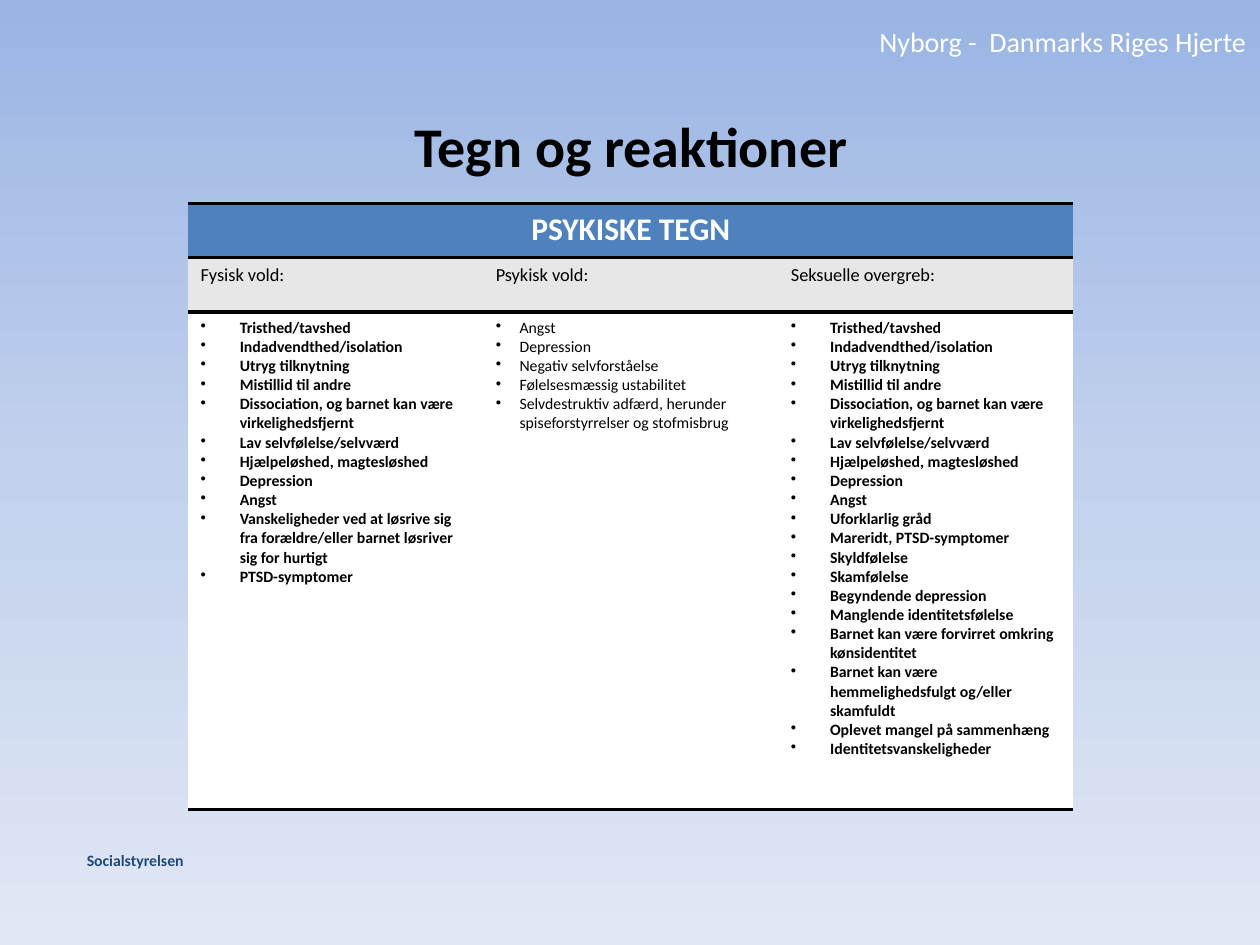
import pptx
import pptx.util
import pptx.dml.color
import pptx.enum.text
import pptx.oxml
import pptx.oxml.ns
import copy

Cm, Pt = pptx.util.Cm, pptx.util.Pt
RGB = pptx.dml.color.RGBColor
ALIGN = pptx.enum.text.PP_ALIGN
qn = pptx.oxml.ns.qn

BLACK = RGB(0x00, 0x00, 0x00)
WHITE = RGB(0xFF, 0xFF, 0xFF)
BLUE = RGB(0x4F, 0x81, 0xBD)
NAVY = RGB(0x1F, 0x49, 0x7D)
GREY = RGB(0xE7, 0xE7, 0xE7)
SKY = [(0, RGB(0x9A, 0xB5, 0xE4)), (0.5, RGB(0xC2, 0xD1, 0xED)),
       (1, RGB(0xE1, 0xE8, 0xF5))]
PLAIN = "{2D5ABB26-0587-4C30-8999-92F81FD0307C}"  # no style, no grid

# Content: text, box in cm, inset in cm, alignment, font
TEXTS = [
    ("Nyborg -  Danmarks Riges Hjerte", (-0.03, 0.38, 25.4, 0.94), None,
     ALIGN.RIGHT, {"size": Pt(16), "color": WHITE}),
    ("Socialstyrelsen", (1.75, 17.15, 3, 0.38), 0,
     ALIGN.LEFT, {"size": Pt(9), "bold": True, "color": NAVY}),
    ("Tegn og reaktioner", (1.75, 2.13, 21.95, 2.11), None,
     ALIGN.CENTER, {"size": Pt(32), "bold": True}),
]
HEAD = "PSYKISKE TEGN"
SHARED = [
    "Tristhed/tavshed", "Indadvendthed/isolation", "Utryg tilknytning",
    "Mistillid til andre",
    "Dissociation, og barnet kan være virkelighedsfjernt",
    "Lav selvfølelse/selvværd", "Hjælpeløshed, magtesløshed",
    "Depression", "Angst",
]
# Heading, signs, bold, indent in cm
COLUMNS = [
    ("Fysisk vold:", SHARED + [
        "Vanskeligheder ved at løsrive sig fra forældre/eller barnet "
        "løsriver sig for hurtigt",
        "PTSD-symptomer"], True, 0.79),
    ("Psykisk vold:", [
        "Angst", "Depression", "Negativ selvforståelse",
        "Følelsesmæssig ustabilitet",
        "Selvdestruktiv adfærd, herunder spiseforstyrrelser og stofmisbrug",
    ], False, 0.48),
    ("Seksuelle overgreb:", SHARED + [
        "Uforklarlig gråd", "Mareridt, PTSD-symptomer", "Skyldfølelse",
        "Skamfølelse", "Begyndende depression", "Manglende identitetsfølelse",
        "Barnet kan være forvirret omkring kønsidentitet",
        "Barnet kan være hemmelighedsfulgt og/eller skamfuldt",
        "Oplevet mangel på sammenhæng", "Identitetsvanskeligheder",
    ], True, 0.79),
]
LEFT, TOP, WIDTH = 3.79, 4.11, 5.95
HEIGHTS = [1.09, 1.09, 10.03]


def style(font, fmt):
    base = {"name": "Calibri", "bold": False, "color": BLACK}
    for key, val in {**base, **fmt}.items():
        if key == "color":
            font.color.rgb = val
        else:
            setattr(font, key, val)


def write(para, text, fmt, align=ALIGN.LEFT):
    para.alignment = align
    run = para.add_run()
    run.text = text
    style(run.font, fmt)


def bullet(para, dent):
    props = para._p.get_or_add_pPr()
    props.set("marL", str(Cm(dent)))
    props.set("indent", str(-Cm(dent)))
    mark = pptx.oxml.parse_xml(
        f'<a:buChar {pptx.oxml.ns.nsdecls("a")} char="•"/>')
    props.append(mark)


def paint(cell, color, sides=()):
    """Borders come before the fill in the cell properties."""
    props = cell._tc.get_or_add_tcPr()
    for side in sides:
        props.append(pptx.oxml.parse_xml(
            f'<a:ln{side} {pptx.oxml.ns.nsdecls("a")} w="{Pt(2)}">'
            f'<a:solidFill><a:srgbClr val="{BLACK}"/></a:solidFill>'
            f'</a:ln{side}>'))
    cell.fill.solid()
    cell.fill.fore_color.rgb = color


def backdrop(slide):
    fill = slide.background.fill
    fill.gradient()
    fill.gradient_angle = 270
    stops = next(slide.element.iter(qn("a:gsLst")))
    stops.append(copy.deepcopy(stops[0]))
    for stop, (pos, color) in zip(fill.gradient_stops, SKY):
        stop.position = pos
        stop.color.rgb = color


def label(slide, text, box, inset, align, fmt):
    frame = slide.shapes.add_textbox(*map(Cm, box)).text_frame
    frame.word_wrap = True
    if inset is not None:
        for side in ("left", "top", "right", "bottom"):
            setattr(frame, f"margin_{side}", Cm(inset))
    write(frame.paragraphs[0], text, fmt, align)


def grid(slide):
    count = len(COLUMNS)
    table = slide.shapes.add_table(
        len(HEIGHTS), count, Cm(LEFT), Cm(TOP),
        Cm(WIDTH * count), Cm(sum(HEIGHTS))).table
    table.first_row = table.horz_banding = False
    next(table._tbl.iter(qn("a:tableStyleId"))).text = PLAIN
    for row, high in zip(table.rows, HEIGHTS):
        row.height = Cm(high)

    # Header across all columns
    table.cell(0, 0).merge(table.cell(0, count - 1))
    write(table.cell(0, 0).text_frame.paragraphs[0], HEAD,
          {"size": Pt(18), "bold": True, "color": WHITE}, ALIGN.CENTER)

    # One column per kind of abuse
    for col, (name, signs, bold, dent) in enumerate(COLUMNS):
        table.columns[col].width = Cm(WIDTH)
        top, mid, low = (table.cell(row, col) for row in range(3))
        paint(top, BLUE, "TB")
        paint(mid, GREY, "T")
        paint(low, WHITE, "B")
        write(mid.text_frame.paragraphs[0], name, {"size": Pt(10.5)})
        frame = low.text_frame
        for num, sign in enumerate(signs):
            para = frame.add_paragraph() if num else frame.paragraphs[0]
            bullet(para, dent)
            write(para, sign, {"size": Pt(9), "bold": bold})


def main():
    deck = pptx.Presentation()
    deck.slide_width, deck.slide_height = Cm(25.4), Cm(19.05)
    slide = deck.slides.add_slide(deck.slide_layouts[6])
    backdrop(slide)
    for item in TEXTS:
        label(slide, *item)
    grid(slide)
    deck.save("out.pptx")


if __name__ == "__main__":
    main()
